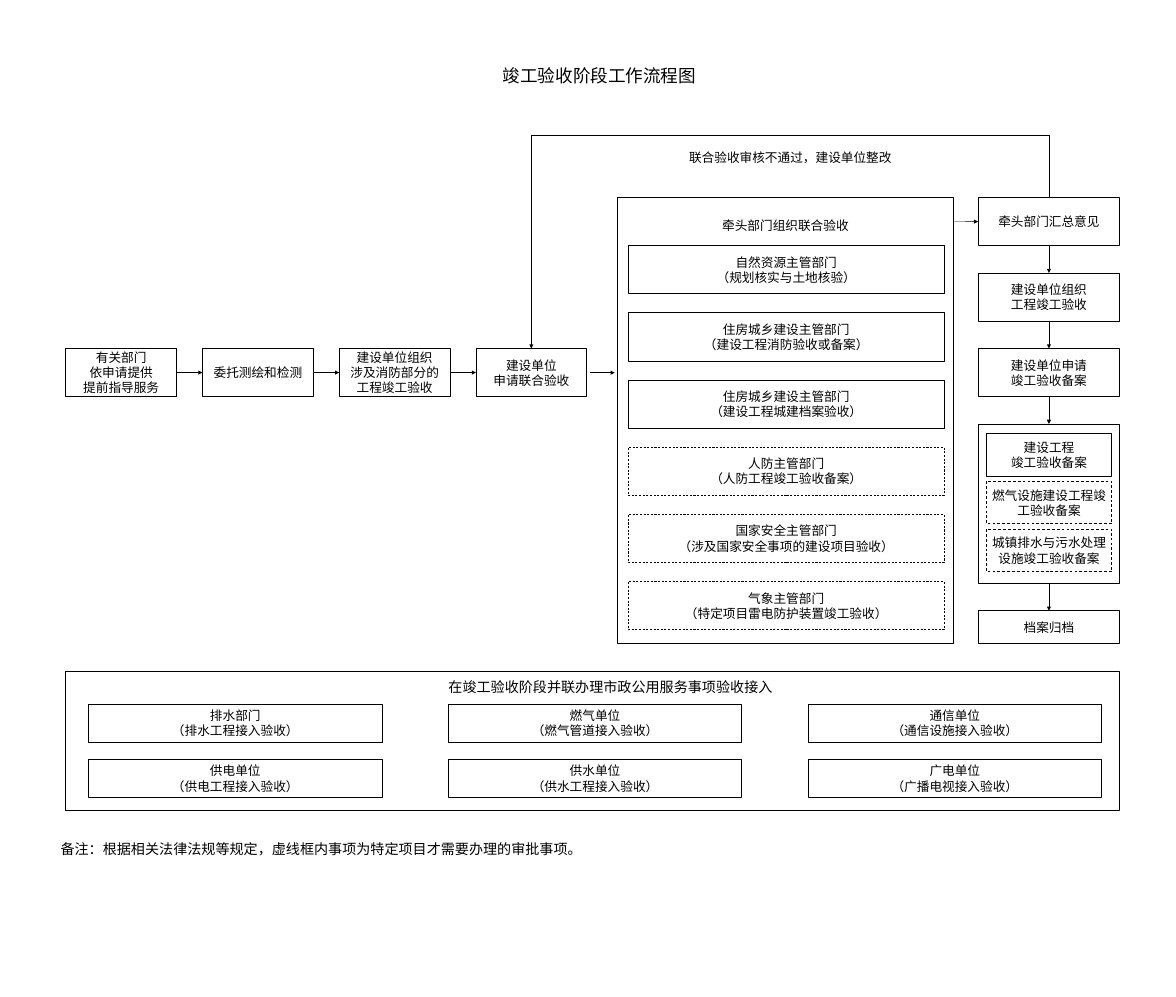
from dataclasses import dataclass

from lxml import etree
from pptx import Presentation
from pptx import util as u
from pptx.dml.color import RGBColor
from pptx.enum import dml, shapes, text
from pptx.oxml import ns

COLORS = {"ink": "000000", "paper": "FFFFFF"}
FONT = "Noto Sans CJK SC"


@dataclass
class Box:
    left: float
    top: float
    width: float
    height: float
    label: str = ""
    dashed: bool = False
    line_width: float = 1
    color: str = "ink"


def rgb(name: str) -> RGBColor:
    return RGBColor.from_string(COLORS[name])


def write_text(shape, content: str, *, size: float = 18, align=text.PP_ALIGN.CENTER,
               anchor=text.MSO_ANCHOR.MIDDLE, spacing: float | None = None) -> None:
    frame = shape.text_frame
    frame.word_wrap = True
    frame.vertical_anchor = anchor
    for index, line in enumerate(content.split("\n")):
        paragraph = frame.add_paragraph() if index else frame.paragraphs[0]
        paragraph.alignment = align
        paragraph.line_spacing = spacing
        run = paragraph.add_run()
        run.text = line
        run.font.name = FONT
        run.font.size = u.Pt(size)
        run.font.color.rgb = rgb("ink")


def add_box(slide, box: Box):
    shape = slide.shapes.add_shape(
        shapes.MSO_SHAPE.RECTANGLE,
        *map(u.Cm, (box.left, box.top, box.width, box.height)))
    shape.shadow.inherit = False
    shape.fill.background()
    shape.line.color.rgb = rgb(box.color)
    shape.line.width = u.Pt(box.line_width)
    if box.dashed:
        shape.line.dash_style = dml.MSO_LINE.DASH
    if box.label:
        write_text(shape, box.label)
    return shape


def add_label(slide, box: Box, **text_format) -> None:
    shape = slide.shapes.add_textbox(
        *map(u.Cm, (box.left, box.top, box.width, box.height)))
    write_text(shape, box.label, anchor=text.MSO_ANCHOR.TOP, **text_format)


def add_arrow(slide, begin: tuple[float, float], end: tuple[float, float],
              kind=shapes.MSO_CONNECTOR.STRAIGHT):
    connector = slide.shapes.add_connector(kind, *map(u.Cm, (*begin, *end)))
    connector.line.color.rgb = rgb("ink")
    connector.line.width = u.Pt(0.5)
    etree.SubElement(connector.line._get_or_add_ln(), ns.qn("a:tailEnd"), type="triangle")
    etree.SubElement(connector._element.spPr, ns.qn("a:effectLst"))
    return connector


def join(slide, source, source_side: int, target, target_side: int) -> None:
    connector = add_arrow(slide, (0, 0), (1, 1))
    connector.begin_connect(source, source_side)
    connector.end_connect(target, target_side)


def add_return_arrow(slide, begin: tuple[float, float], end: tuple[float, float],
                     peak: float) -> None:
    middle_x, middle_y = (begin[0] + end[0]) / 2, (begin[1] + end[1]) / 2
    rise, reach = end[1] - begin[1], begin[0] - end[0]
    connector = add_arrow(
        slide, (middle_x + rise / 2, middle_y + reach / 2),
        (middle_x - rise / 2, middle_y - reach / 2), shapes.MSO_CONNECTOR.ELBOW)
    properties = connector._element.spPr
    properties.find(ns.qn("a:xfrm")).set("rot", "16200000")
    geometry = properties.find(ns.qn("a:prstGeom"))
    adjustments = geometry.find(ns.qn("a:avLst"))
    if adjustments is None:
        adjustments = etree.SubElement(geometry, ns.qn("a:avLst"))
    bend = round((peak - begin[1]) / rise * 100000)
    etree.SubElement(adjustments, ns.qn("a:gd"), name="adj1", fmla=f"val {bend}")


PROCESS = [
    "有关部门\n依申请提供\n提前指导服务",
    "委托测绘和检测",
    "建设单位组织\n涉及消防部分的工程竣工验收",
    "建设单位\n申请联合验收",
]
REVIEWS = [
    "自然资源主管部门\n（规划核实与土地核验）",
    "住房城乡建设主管部门\n（建设工程消防验收或备案）",
    "住房城乡建设主管部门\n（建设工程城建档案验收）",
    "人防主管部门\n（人防工程竣工验收备案）",
    "国家安全主管部门\n（涉及国家安全事项的建设项目验收）",
    "气象主管部门\n（特定项目雷电防护装置竣工验收）",
]
CLOSING = ["牵头部门汇总意见", "建设单位组织\n工程竣工验收", "建设单位申请\n竣工验收备案"]
FILINGS = ["建设工程\n竣工验收备案", "燃气设施建设工程竣工验收备案", "城镇排水与污水处理设施竣工验收备案"]
UTILITIES = [
    "排水部门\n（排水工程接入验收）",
    "燃气单位\n（燃气管道接入验收）",
    "通信单位\n（通信设施接入验收）",
    "供电单位\n（供电工程接入验收）",
    "供水单位\n（供水工程接入验收）",
    "广电单位\n（广播电视接入验收）",
]


def main() -> None:
    presentation = Presentation()
    presentation.slide_width, presentation.slide_height = u.Cm(59), u.Cm(50)
    slide = presentation.slides.add_slide(presentation.slide_layouts[6])

    add_label(slide, Box(17.27, 3.15, 25.6, 1.32, "竣工验收阶段工作流程图"), size=25)

    process = [add_box(slide, Box(3.3 + 6.86 * index, 17.48, 5.56, 2.41, label))
               for index, label in enumerate(PROCESS)]
    for index, label in enumerate(REVIEWS):
        optional = index >= 3
        add_box(slide, Box(31.52, 12.32 + 3.37 * index, 15.85, 2.41, label,
                           optional, 0 if optional else 1))
    add_box(slide, Box(30.99, 9.91, 16.84, 22.38))
    add_box(slide, Box(34.54, 10.69, 9.73, 1.27, "牵头部门组织联合验收", color="paper"))

    closing = [add_box(slide, Box(49.07, 9.91 + 3.785 * index, 7.11, 2.41, label))
               for index, label in enumerate(CLOSING)]
    for index, label in enumerate(FILINGS):
        add_box(slide, Box(49.48, 21.74 + 2.4 * index, 6.3, 2.13, label, index > 0))
    closing.append(add_box(slide, Box(49.07, 21.26, 7.11, 8)))
    closing.append(add_box(slide, Box(49.07, 30.63, 7.11, 1.65, "档案归档")))

    for index, label in enumerate(UTILITIES):
        row, column = divmod(index, 3)
        add_box(slide, Box(4.45 + 18.05 * column, 35.33 + 2.77 * row, 14.71, 1.88, label))
    add_box(slide, Box(3.3, 33.68, 52.88, 6.96))
    add_label(slide, Box(14.07, 33.88, 33.12, 1.12,
                         "在竣工验收阶段并联办理市政公用服务事项验收接入"), size=20)
    add_label(slide, Box(2.79, 41.58, 32.31, 1.52,
                         "备注：根据相关法律法规等规定，虚线框内事项为特定项目才需要办理的审批事项。"),
              size=20, align=text.PP_ALIGN.LEFT, spacing=1.5)
    add_label(slide, Box(26.85, 7.37, 25.6, 1.02, "联合验收审核不通过，建设单位整改"))

    for source, target in zip(process, process[1:]):
        join(slide, source, 3, target, 1)
    for source, target in zip(closing, closing[1:]):
        join(slide, source, 2, target, 0)
    add_arrow(slide, (29.6, 18.69), (30.84, 18.69))
    add_arrow(slide, (47.83, 11.12), (49.07, 11.12)).end_connect(closing[0], 1)
    add_return_arrow(slide, (52.63, 9.91), (26.66, 17.48), 6.8)

    presentation.save("out.pptx")


if __name__ == "__main__":
    main()
